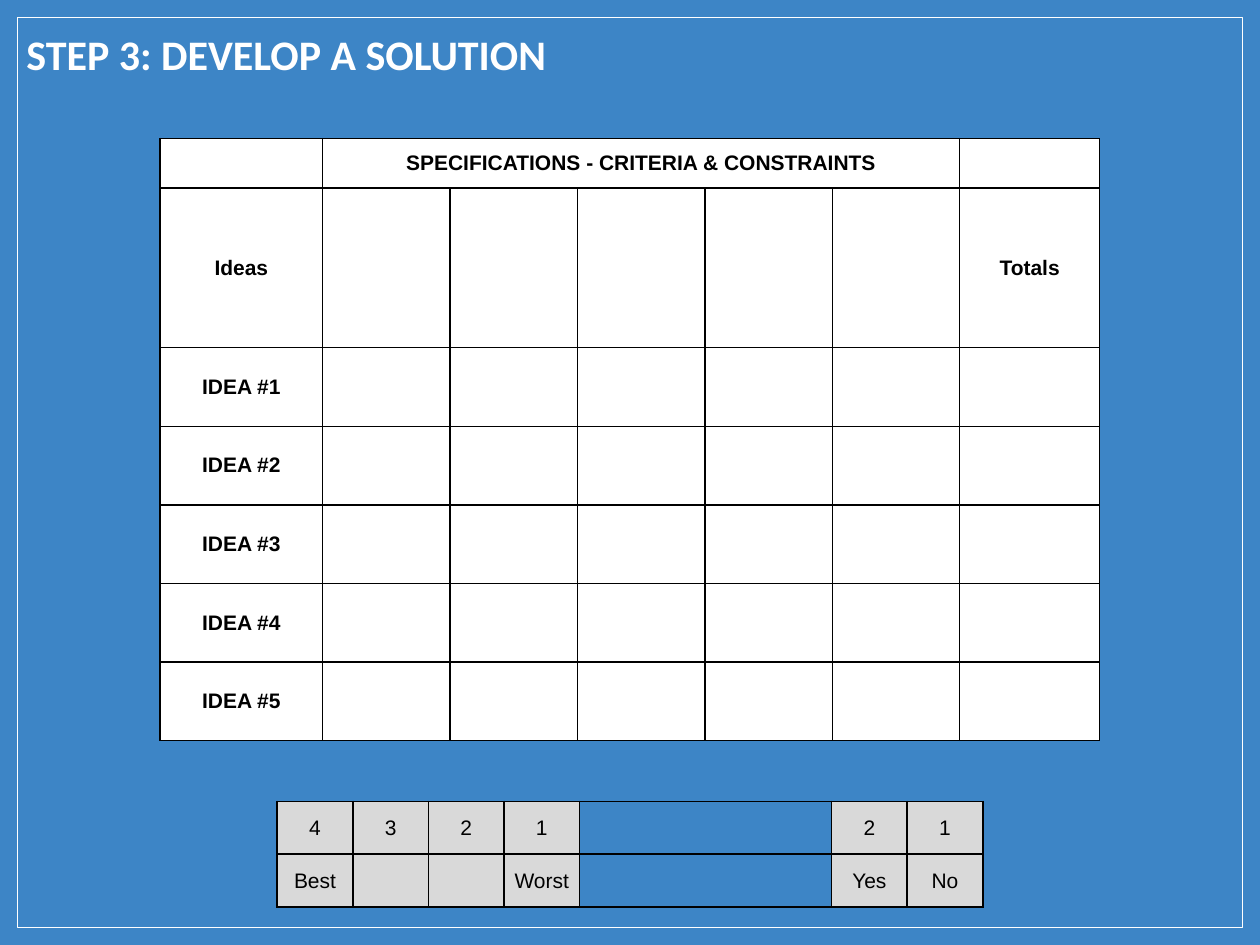
from dataclasses import dataclass

from lxml import etree
from pptx import Presentation
from pptx import util as u
from pptx.dml.color import RGBColor
from pptx.enum import shapes, text
from pptx.oxml import ns


@dataclass(frozen=True)
class Theme:
    background: str = "3D85C6"
    white: str = "FFFFFF"
    black: str = "000000"
    grey: str = "D9D9D9"
    title_font: str = "Calibri"
    table_font: str = "Arial"
    title_size: int = 24
    table_size: int = 12
    border: float = 1


THEME = Theme()
WIDTH, HEIGHT = 10, 7.5


def inches(box):
    return [u.Inches(length) for length in box]


def write(paragraph, words, font, size, colour, bold):
    run = paragraph.add_run()
    run.text = words
    run.font.name = font
    run.font.size = u.Pt(size)
    run.font.bold = bold
    run.font.color.rgb = RGBColor.from_string(colour)


def add_frame(slide, box):
    frame = slide.shapes.add_shape(shapes.MSO_SHAPE.RECTANGLE, *inches(box))
    frame.shadow.inherit = False
    frame.fill.background()
    frame.line.color.rgb = RGBColor.from_string(THEME.white)
    frame.line.width = u.Pt(0.75)


def add_title(slide, box, words):
    title = slide.shapes.title
    title.left, title.top, title.width, title.height = inches(box)
    frame = title.text_frame
    frame.margin_left = frame.margin_right = u.Inches(0.1)
    frame.margin_top = frame.margin_bottom = u.Inches(0.1)
    frame.vertical_anchor = text.MSO_ANCHOR.TOP
    frame.auto_size = text.MSO_AUTO_SIZE.NONE
    paragraph = frame.paragraphs[0]
    paragraph.alignment = text.PP_ALIGN.LEFT
    write(paragraph, words, THEME.title_font, THEME.title_size, THEME.white, True)


def add_borders(cell):
    properties = cell._tc.get_or_add_tcPr()
    for side in ("lnL", "lnR", "lnT", "lnB"):
        line = etree.SubElement(properties, ns.qn(f"a:{side}"), w=str(u.Pt(THEME.border)))
        fill = etree.SubElement(line, ns.qn("a:solidFill"))
        etree.SubElement(fill, ns.qn("a:srgbClr"), val=THEME.black)


def add_grid(slide, box, columns, rows, labels, fill, bold, margins, clear_columns=()):
    """Fill the box with a table; columns and rows are relative sizes."""
    left, top, width, height = box
    table = slide.shapes.add_table(len(rows), len(columns), *inches(box)).table
    table.first_row = table.horz_banding = False
    for column, share in zip(table.columns, columns):
        column.width = u.Inches(width * share / sum(columns))
    for row, share in zip(table.rows, rows):
        row.height = u.Inches(height * share / sum(rows))
    side, vertical = margins
    for r in range(len(rows)):
        for c in range(len(columns)):
            cell = table.cell(r, c)
            words = labels.get((r, c))
            add_borders(cell)
            if c in clear_columns:
                cell.fill.background()
            else:
                cell.fill.solid()
                cell.fill.fore_color.rgb = RGBColor.from_string(fill)
            cell.vertical_anchor = text.MSO_ANCHOR.MIDDLE
            cell.margin_left = cell.margin_right = u.Inches(side)
            cell.margin_top = cell.margin_bottom = u.Inches(vertical if words else 0)
            if words:
                paragraph = cell.text_frame.paragraphs[0]
                paragraph.alignment = text.PP_ALIGN.CENTER
                write(paragraph, words, THEME.table_font, THEME.table_size, THEME.black, bold)
    return table


def add_decision_matrix(slide, box):
    criteria, ideas = 5, 5
    labels = {(0, 1): "SPECIFICATIONS - CRITERIA & CONSTRAINTS",
              (1, 0): "Ideas", (1, criteria + 1): "Totals"}
    labels.update({(n + 1, 0): f"IDEA #{n}" for n in range(1, ideas + 1)})
    table = add_grid(slide, box, [1.29] + [1.01] * criteria + [1.11],
                     [0.39, 1.26] + [0.62] * ideas, labels,
                     THEME.white, True, (0.08, 0))
    table.cell(0, 1).merge(table.cell(0, criteria))


def add_score_key(slide, box):
    scores = [["4", "3", "2", "1", "", "2", "1"],
              ["Best", "", "", "Worst", "", "Yes", "No"]]
    labels = {(r, c): words for r, row in enumerate(scores) for c, words in enumerate(row)}
    add_grid(slide, box, [0.6] * 4 + [2] + [0.6] * 2, [1, 1], labels,
             THEME.grey, False, (0.07, 0.07), clear_columns=(4,))


def main():
    presentation = Presentation()
    presentation.slide_width, presentation.slide_height = inches((WIDTH, HEIGHT))
    slide = presentation.slides.add_slide(presentation.slide_layouts[5])
    slide.background.fill.solid()
    slide.background.fill.fore_color.rgb = RGBColor.from_string(THEME.background)
    edge = 0.14
    add_frame(slide, (edge, edge, WIDTH - 2 * edge, HEIGHT - 2 * edge))
    add_title(slide, (0.11, 0.13, 9.82, 0.62), "STEP 3: DEVELOP A SOLUTION")
    for add_region, top, width, height in ((add_decision_matrix, 1.1, 7.46, 4.78),
                                           (add_score_key, 6.36, 5.6, 0.84)):
        add_region(slide, ((WIDTH - width) / 2, top, width, height))
    presentation.save("out.pptx")


if __name__ == "__main__":
    main()
